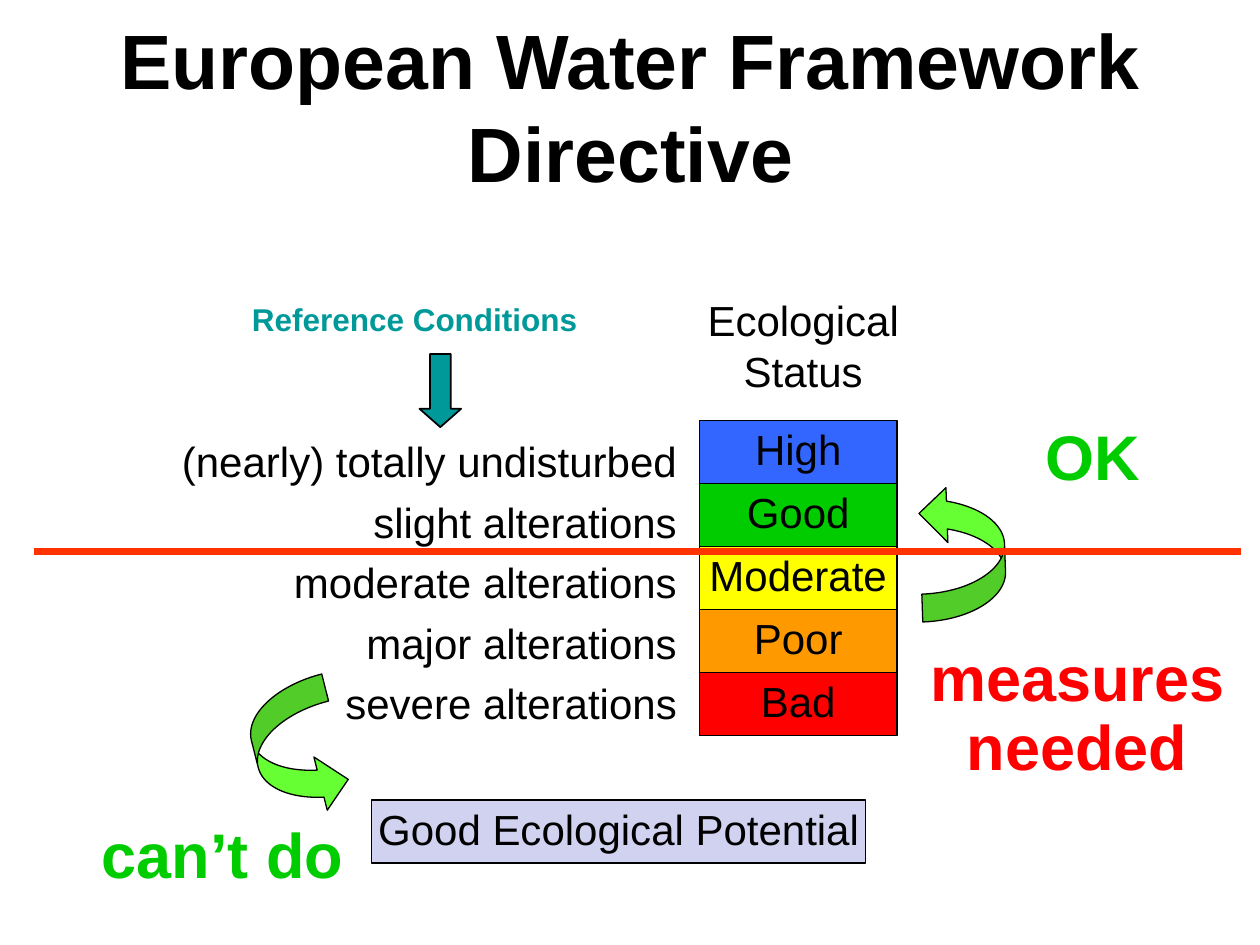
from lxml.etree import SubElement
from pptx import Presentation
from pptx.dml.color import RGBColor
from pptx.enum.shapes import MSO_CONNECTOR, MSO_SHAPE
from pptx.enum.text import MSO_ANCHOR, PP_ALIGN
from pptx.oxml.ns import qn
from pptx.util import Inches, Pt

prs = Presentation()
prs.slide_width, prs.slide_height = Inches(10), Inches(7.5)
s = prs.slides.add_slide(prs.slide_layouts[6])


def write(sp, lines, size=24, color="000000", bold=False, align=PP_ALIGN.CENTER,
          spacing=0.9, anchor=MSO_ANCHOR.TOP, wrap=True):
    """Fill a shape with one paragraph per line, all in the same style."""
    tf = sp.text_frame
    tf.word_wrap = wrap
    tf.vertical_anchor = anchor
    tf.text = "\n".join(lines)
    for p in tf.paragraphs:
        p.alignment = align
        p.line_spacing = spacing
        p.font.name = "Arial"
        p.font.size = Pt(size)
        p.font.bold = bold
        p.font.color.rgb = RGBColor.from_string(color)


def add_shape(kind, box, fill, line_width=0.75):
    sp = s.shapes.add_shape(kind, *map(Inches, box))
    sp.shadow.inherit = False
    sp.fill.solid()
    sp.fill.fore_color.rgb = RGBColor.from_string(fill)
    sp.line.color.rgb = RGBColor.from_string("000000")
    sp.line.width = Pt(line_width)
    return sp


# Title, headings and alteration levels
texts = [
    ((0.2, 0.21, 9.61, 1.25), ["European Water Framework Directive"],
     dict(size=44, bold=True, spacing=1, anchor=MSO_ANCHOR.MIDDLE)),
    ((1.3, 3.33, 4.17, 2.86),
     ["(nearly) totally undisturbed", "slight alterations", "moderate alterations",
      "major alterations", "severe alterations"],
     dict(align=PP_ALIGN.RIGHT, spacing=1.2)),
    ((1.9, 2.33, 3.02, 0.4), ["Reference Conditions"],
     dict(size=18, color="009999", bold=True, align=PP_ALIGN.LEFT, spacing=1)),
    ((5.39, 2.29, 1.97, 0.91), ["Ecological Status"], dict(spacing=1)),
    ((8.17, 3.33, 1, 0.65), ["OK"], dict(size=36, color="00CC00", bold=True)),
    ((0.04, 6.49, 3.45, 0.65), ["can’t do"],
     dict(size=36, color="00CC00", bold=True)),
    ((7.25, 5.09, 2.6, 1.19), ["measures", "needed"],
     dict(size=36, color="FF0000", bold=True)),
]
for box, lines, style in texts:
    write(s.shapes.add_textbox(*map(Inches, box)), lines, **style)

# Status classes, stacked, and the alternative target below
classes = [("High", "3366FF"), ("Good", "00CC00"), ("Moderate", "FFFF00"),
           ("Poor", "FF9900"), ("Bad", "FF0000")]
bars = [(name, fill, (5.55, 3.34 + 0.5 * i, 1.57, 0.5))
        for i, (name, fill) in enumerate(classes)]
bars.append(("Good Ecological Potential", "D1D1F0", (2.95, 6.35, 3.92, 0.5)))
for name, fill, box in bars:
    write(add_shape(MSO_SHAPE.RECTANGLE, box, fill), [name],
          anchor=MSO_ANCHOR.MIDDLE, wrap=False)

# Arrows
down = add_shape(MSO_SHAPE.DOWN_ARROW, (3.33, 2.81, 0.33, 0.58), "009999", 1)
down.adjustments[1] = 0.44
for left, top, angle in [(7.1, 4.05, 268), (1.82, 5.62, 75.9)]:
    sp = add_shape(MSO_SHAPE.CURVED_UP_ARROW, (left, top, 1.08, 0.67), "66FF33")
    sp.rotation = angle
    for i, value in enumerate([0.33, 0.65, 0.33]):
        sp.adjustments[i] = value

# Line between acceptable and unacceptable status
limit = s.shapes.add_connector(MSO_CONNECTOR.STRAIGHT, Inches(0.27), Inches(4.38),
                               Inches(9.85), Inches(4.38))
limit.line.color.rgb = RGBColor.from_string("FF3300")
limit.line.width = Pt(4)
SubElement(limit._element.spPr, qn("a:effectLst"))

prs.save("out.pptx")
